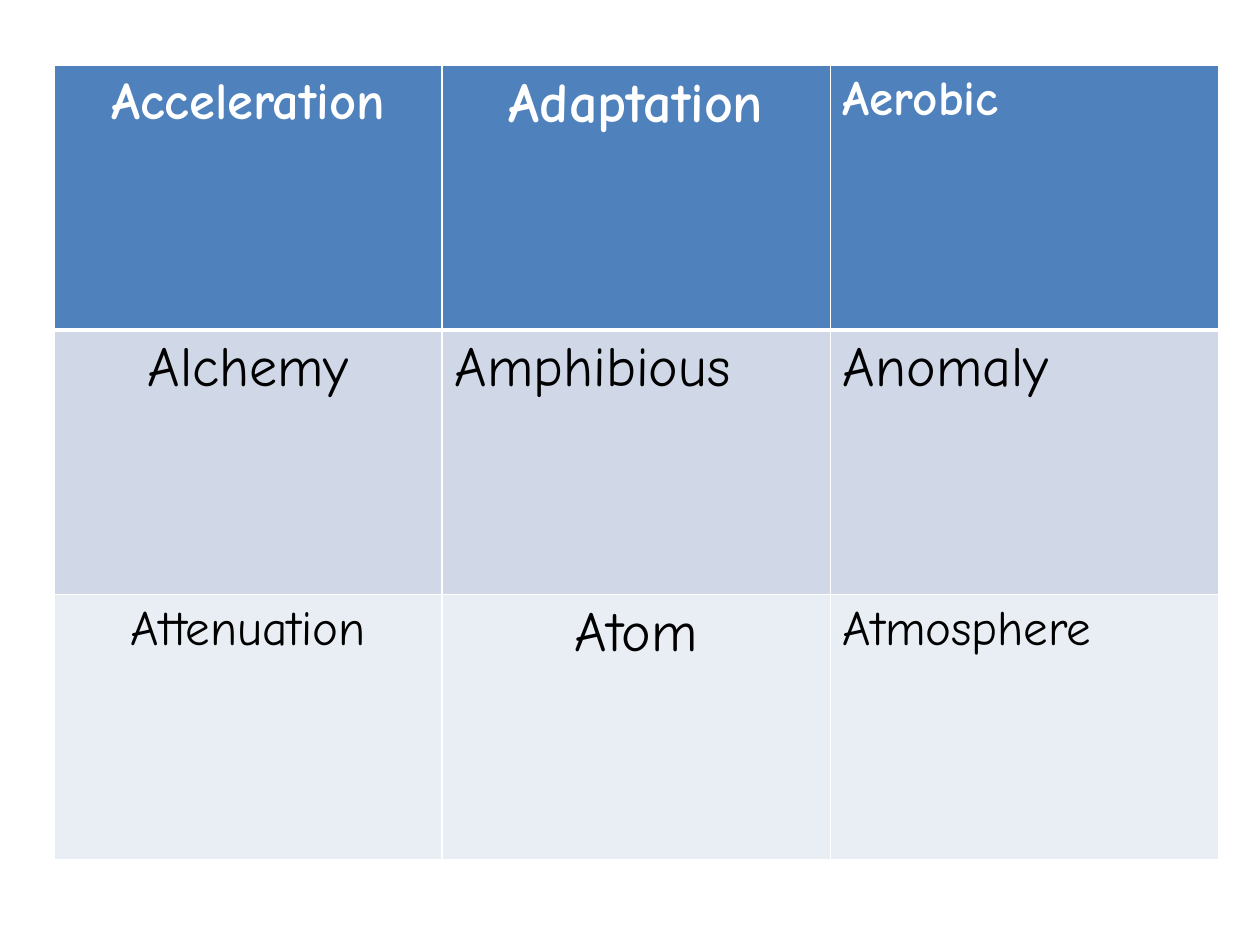
from dataclasses import dataclass

from lxml.etree import SubElement
from pptx import Presentation
from pptx.dml.color import RGBColor
from pptx.enum.text import PP_ALIGN as Align
from pptx.oxml.ns import qn
from pptx.util import Inches, Pt

WHITE = RGBColor(0xFF, 0xFF, 0xFF)
BLACK = RGBColor(0x00, 0x00, 0x00)
BLUE = RGBColor(0x4F, 0x81, 0xBD)
BLUE_GREY = RGBColor(0xD0, 0xD8, 0xE8)
PALE_GREY = RGBColor(0xE9, 0xED, 0xF4)
FONT = "Comic Neue"
COL_WIDTH, ROW_HEIGHT = 3.08, 2.1


@dataclass(frozen=True)
class Term:
    text: str
    size: int
    align: Align = Align.CENTER


@dataclass(frozen=True)
class Row:
    terms: tuple[Term, ...]
    fill: RGBColor
    color: RGBColor = BLACK
    bold: bool = False
    top: int = 1
    bottom: int = 1


ROWS = (
    Row((Term("Acceleration", 30), Term("Adaptation", 32),
         Term("Aerobic", 28, Align.LEFT)), BLUE, WHITE, True, bottom=3),
    Row((Term("Alchemy", 32), Term("Amphibious", 32, Align.LEFT),
         Term("Anomaly", 32, Align.LEFT)), BLUE_GREY, top=3),
    Row((Term("Attenuation", 28), Term("Atom", 32),
         Term("Atmosphere", 28, Align.LEFT)), PALE_GREY),
)


def add_borders(cell, row: Row) -> None:
    tc_pr = cell._tc.get_or_add_tcPr()
    widths = {"lnL": 1, "lnR": 1, "lnT": row.top, "lnB": row.bottom}
    for side, width in widths.items():
        ln = SubElement(tc_pr, qn(f"a:{side}"), w=str(Pt(width)))
        fill = SubElement(ln, qn("a:solidFill"))
        SubElement(fill, qn("a:srgbClr"), val=str(WHITE))


def fill_cell(cell, term: Term, row: Row) -> None:
    add_borders(cell, row)
    cell.fill.solid()
    cell.fill.fore_color.rgb = row.fill
    p = cell.text_frame.paragraphs[0]
    p.alignment = term.align
    r = p.add_run()
    r.text = term.text
    r.font.name = FONT
    r.font.size = Pt(term.size)
    r.font.bold = row.bold
    r.font.color.rgb = row.color


def main() -> None:
    """Build a vocabulary slide with a three by three grid of science terms."""
    prs = Presentation()
    prs.slide_width, prs.slide_height = Inches(10), Inches(7.5)
    s = prs.slides.add_slide(prs.slide_layouts[6])
    n_rows, n_cols = len(ROWS), len(ROWS[0].terms)
    table = s.shapes.add_table(
        n_rows, n_cols, Inches(0.43), Inches(0.52),
        Inches(COL_WIDTH * n_cols), Inches(ROW_HEIGHT * n_rows)).table
    for col in table.columns:
        col.width = Inches(COL_WIDTH)
    for i, row in enumerate(ROWS):
        table.rows[i].height = Inches(ROW_HEIGHT)
        for j, term in enumerate(row.terms):
            fill_cell(table.cell(i, j), term, row)
    prs.save("out.pptx")


if __name__ == "__main__":
    main()
